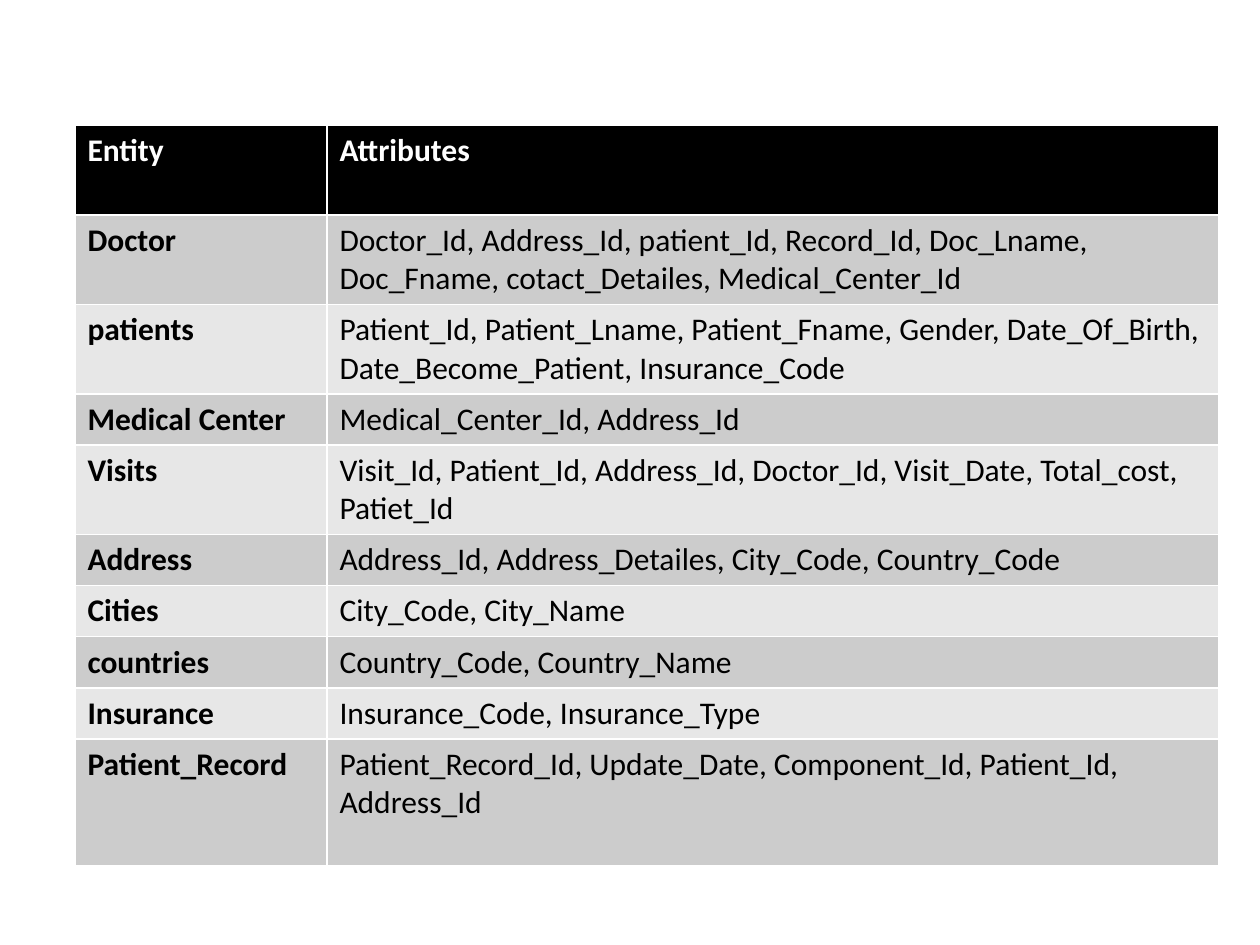
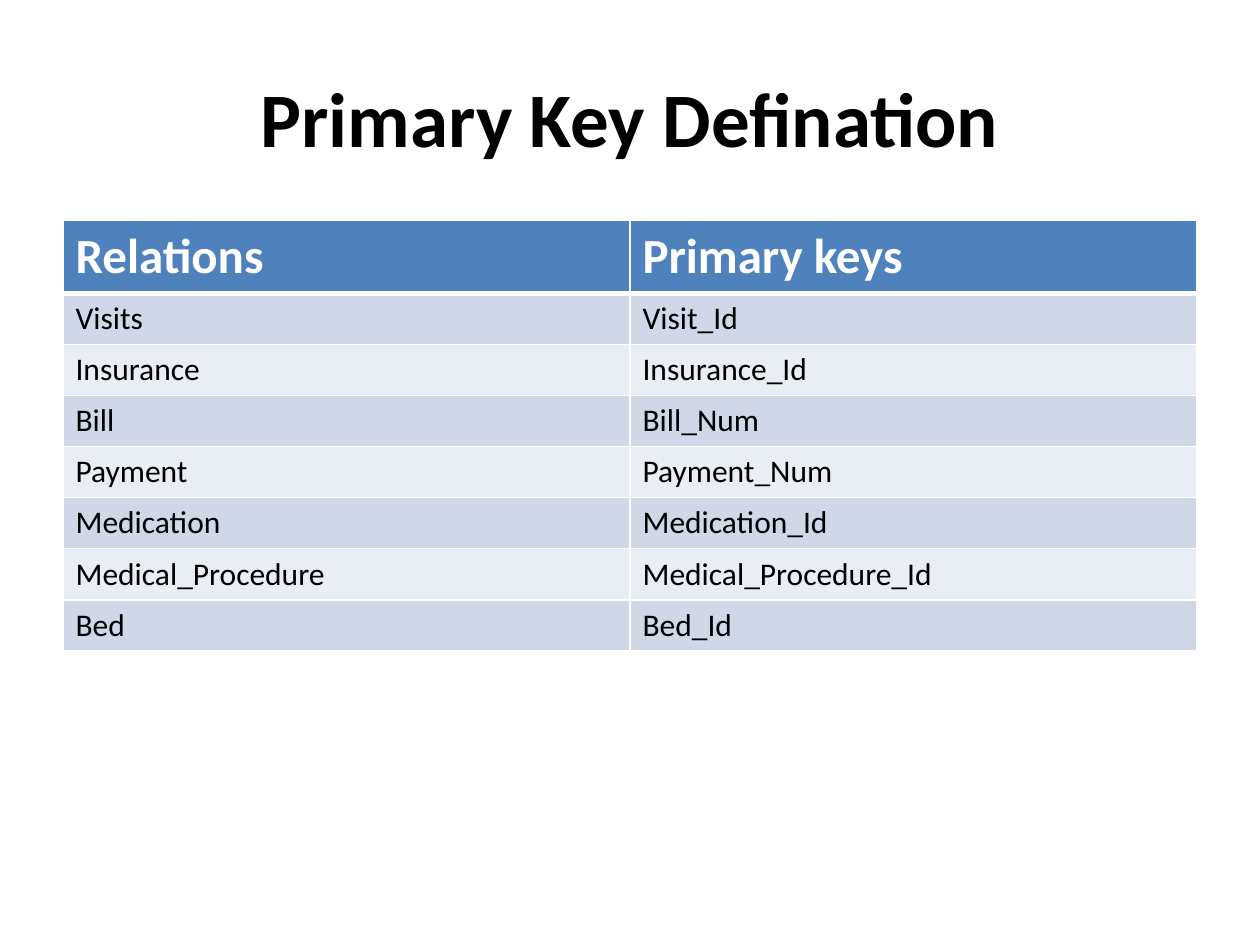
import pptx
import pptx.dml.color
import pptx.enum.text
import pptx.oxml
import pptx.oxml.ns
import pptx.util
from pptx.util import Cm

FONT = "Calibri"
BLACK = "000000"
WHITE = "FFFFFF"
LINE_HEIGHT = 1.03
TWO_LINE_HEIGHT = 1.8


def write_text(frame, text, size=18, color=BLACK, bold=False, align=None):
    paragraph = frame.paragraphs[0]
    paragraph.alignment = align
    run = paragraph.add_run()
    run.text = text
    run.font.name = FONT
    run.font.size = pptx.util.Pt(size)
    run.font.bold = bold
    run.font.color.rgb = pptx.dml.color.RGBColor.from_string(color)


def add_banded_table(slide, rows, left, top, widths, heights, header_color,
                     bands, header_size=18, header_line=1, bold_names=False):
    """Add a white-ruled table whose body rows alternate between two fills."""
    table = slide.shapes.add_table(
        len(rows), len(widths), Cm(left), Cm(top),
        Cm(sum(widths)), Cm(sum(heights))).table
    for column, width in zip(table.columns, widths):
        column.width = Cm(width)
    for row_index, (row, height) in enumerate(zip(rows, heights)):
        table.rows[row_index].height = Cm(height)
        is_header = row_index == 0
        fill_color = header_color if is_header else bands[(row_index - 1) % 2]
        line_widths = {
            "lnL": 1, "lnR": 1,
            "lnT": header_line if row_index == 1 else 1,
            "lnB": header_line if is_header else 1}
        for column_index, text in enumerate(row):
            cell = table.cell(row_index, column_index)
            write_text(cell.text_frame, text,
                       size=header_size if is_header else 18,
                       color=WHITE if is_header else BLACK,
                       bold=is_header or (bold_names and column_index == 0))
            properties = cell._tc.get_or_add_tcPr()
            for side, points in line_widths.items():
                properties.append(pptx.oxml.parse_xml(
                    f'<a:{side} {pptx.oxml.ns.nsdecls("a")} w="{pptx.util.Pt(points)}">'
                    f'<a:solidFill><a:srgbClr val="{WHITE}"/></a:solidFill></a:{side}>'))
            cell.fill.solid()
            cell.fill.fore_color.rgb = pptx.dml.color.RGBColor.from_string(fill_color)


presentation = pptx.Presentation()
presentation.slide_width = Cm(25.4)
presentation.slide_height = Cm(19.05)

# Entities and their attributes
entity_rows = [
    ("Entity", "Attributes"),
    ("Doctor", "Doctor_Id, Address_Id, patient_Id, Record_Id, Doc_Lname, "
               "Doc_Fname, cotact_Detailes, Medical_Center_Id"),
    ("patients", "Patient_Id, Patient_Lname, Patient_Fname, Gender, Date_Of_Birth, "
                 "Date_Become_Patient, Insurance_Code"),
    ("Medical Center", "Medical_Center_Id, Address_Id"),
    ("Visits", "Visit_Id, Patient_Id, Address_Id, Doctor_Id, Visit_Date, "
               "Total_cost, Patiet_Id"),
    ("Address", "Address_Id, Address_Detailes, City_Code, Country_Code"),
    ("Cities", "City_Code, City_Name"),
    ("countries", "Country_Code, Country_Name"),
    ("Insurance", "Insurance_Code, Insurance_Type"),
    ("Patient_Record", "Patient_Record_Id, Update_Date, Component_Id, Patient_Id, "
                       "Address_Id"),
]
entity_heights = ([TWO_LINE_HEIGHT] * 3 + [LINE_HEIGHT, TWO_LINE_HEIGHT]
                  + [LINE_HEIGHT] * 4 + [2.56])
slide = presentation.slides.add_slide(presentation.slide_layouts[6])
add_banded_table(slide, entity_rows, 1.51, 2.53, [5.08, 17.98], entity_heights,
                 BLACK, ("CCCCCC", "E7E7E7"), bold_names=True)

# Primary keys
key_rows = [
    ("Relations", "Primary keys"),
    ("Visits", "Visit_Id"),
    ("Insurance", "Insurance_Id"),
    ("Bill", "Bill_Num"),
    ("Payment", "Payment_Num"),
    ("Medication", "Medication_Id"),
    ("Medical_Procedure", "Medical_Procedure_Id"),
    ("Bed", "Bed_Id"),
]
key_heights = [1.44] + [LINE_HEIGHT] * (len(key_rows) - 1)
slide = presentation.slides.add_slide(presentation.slide_layouts[5])
title = slide.shapes.title
title.left, title.top, title.width, title.height = Cm(1.27), Cm(0.76), Cm(22.86), Cm(3.18)
title.text_frame.vertical_anchor = pptx.enum.text.MSO_ANCHOR.MIDDLE
write_text(title.text_frame, "Primary Key Defination", size=44, bold=True,
           align=pptx.enum.text.PP_ALIGN.CENTER)
add_banded_table(slide, key_rows, 1.27, 4.45, [11.43, 11.43], key_heights,
                 "4F81BD", ("D0D8E8", "E9EDF4"), header_size=28, header_line=3)

presentation.save("out.pptx")
